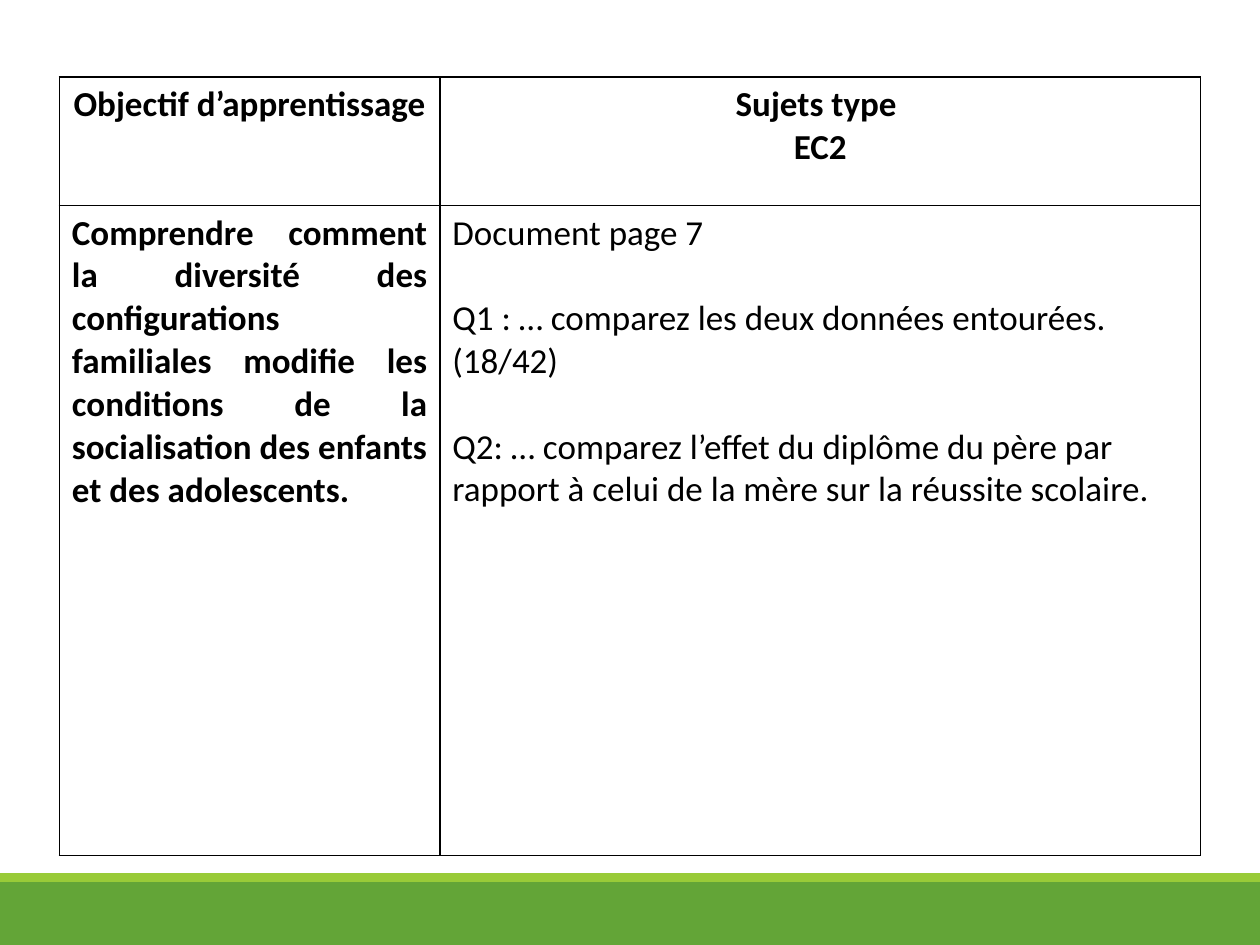
from lxml import etree
from pptx import Presentation
from pptx.dml.color import RGBColor
from pptx.enum import shapes, text
from pptx.oxml import ns
from pptx.util import Pt


def color(value):
    """Turn a hex string into a colour."""
    return RGBColor.from_string(value)


def write(frame, lines, size=20, bold=False, align=text.PP_ALIGN.LEFT, gap=0):
    """Write one paragraph per line, with a gap in points between them."""
    for index, line in enumerate(lines):
        paragraph = frame.paragraphs[0] if index == 0 else frame.add_paragraph()
        paragraph.alignment = align
        paragraph.space_before = Pt(gap if index else 0)
        run = paragraph.add_run()
        run.text = line
        run.font.name = "Calibri"
        run.font.size = Pt(size)
        run.font.bold = bold
        run.font.color.rgb = color("000000")


presentation = Presentation()
presentation.slide_width = Pt(720)
presentation.slide_height = Pt(540)
slide = presentation.slides.add_slide(presentation.slide_layouts[6])

# Footer bands
for top, height, fill in [(504, 36, "63A537"), (499, 5, "99CB38")]:
    band = slide.shapes.add_shape(
        shapes.MSO_SHAPE.RECTANGLE, Pt(0), Pt(top), Pt(720), Pt(height))
    band.shadow.inherit = False
    band.fill.solid()
    band.fill.fore_color.rgb = color(fill)
    band.line.fill.background()

# Table of objectives and exam questions
column_widths = [217.4, 434.8]
row_heights = [73.4, 371.5]
table = slide.shapes.add_table(
    2, 2, Pt(33.9), Pt(44), Pt(sum(column_widths)), Pt(sum(row_heights))).table
for column, width in zip(table.columns, column_widths):
    column.width = Pt(width)
for row, height in zip(table.rows, row_heights):
    row.height = Pt(height)

heading = {"bold": True, "align": text.PP_ALIGN.CENTER}
contents = [
    (["Objectif d’apprentissage "], heading),
    (["Sujets type ", "EC2"], heading),
    (["Comprendre comment la diversité des configurations familiales modifie "
      "les conditions de la socialisation des enfants et des adolescents. "],
     {"bold": True, "align": text.PP_ALIGN.JUSTIFY}),
    (["Document page 7",
      "Q1 : … comparez les deux données entourées. (18/42)",
      "Q2: … comparez l’effet du diplôme du père par rapport à celui de la "
      "mère sur la réussite scolaire."], {"gap": 24.4}),
]
for cell, (lines, style) in zip(table.iter_cells(), contents):
    write(cell.text_frame, lines, **style)
    cell.fill.solid()
    cell.fill.fore_color.rgb = color("FFFFFF")
    properties = cell._tc.get_or_add_tcPr()
    for position, side in enumerate(["lnL", "lnR", "lnT", "lnB"]):
        border = etree.Element(ns.qn(f"a:{side}"), w=str(Pt(1)))
        solid = etree.SubElement(border, ns.qn("a:solidFill"))
        etree.SubElement(solid, ns.qn("a:srgbClr"), val="000000")
        properties.insert(position, border)

presentation.save("out.pptx")
